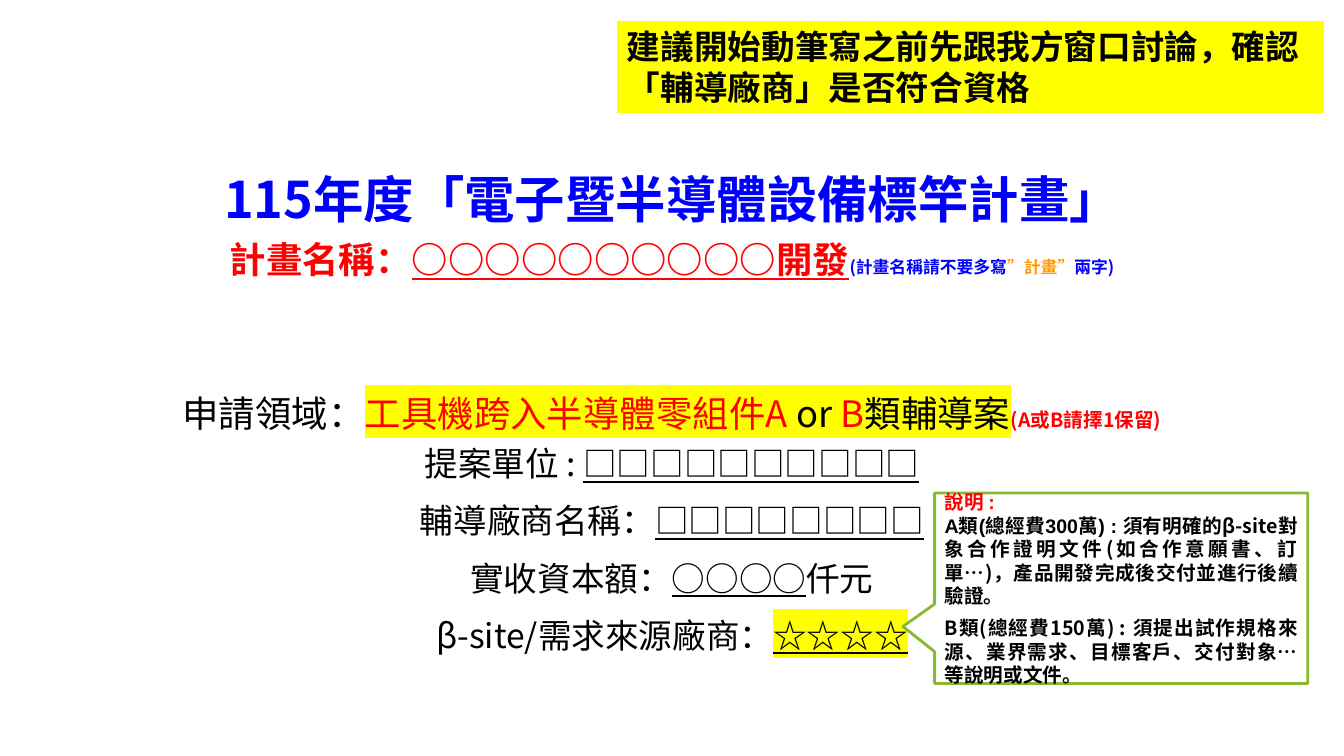
import pptx
import pptx.util
import pptx.oxml.ns
import pptx.dml.color
import pptx.enum.shapes
import pptx.enum.text
from lxml import etree

Inches, Pt = pptx.util.Inches, pptx.util.Pt
RGBColor = pptx.dml.color.RGBColor
SHAPE = pptx.enum.shapes.MSO_SHAPE
ALIGN = pptx.enum.text.PP_ALIGN
ANCHOR = pptx.enum.text.MSO_ANCHOR
AUTOSIZE = pptx.enum.text.MSO_AUTO_SIZE
qn = pptx.oxml.ns.qn

BLACK = RGBColor(0x00, 0x00, 0x00)
WHITE = RGBColor(0xFF, 0xFF, 0xFF)
BLUE = RGBColor(0x00, 0x00, 0xFF)
RED = RGBColor(0xFF, 0x00, 0x00)
ORANGE = RGBColor(0xFF, 0x99, 0x00)
YELLOW = RGBColor(0xFF, 0xFF, 0x00)
GREEN = RGBColor(0x8A, 0xB8, 0x33)
CJK = "Noto Sans CJK SC"


class SlideBuilder:
    base = dict(name=CJK, size=Pt(24), bold=False, underline=False)

    def __init__(self, s):
        self.s = s

    def run(self, p, text, color=BLACK, highlight=None, **fmt):
        r = p.add_run()
        r.text = text
        for key, value in {**self.base, **fmt}.items():
            setattr(r.font, key, value)
        r.font.color.rgb = color
        latin = r.font._element.find(qn("a:latin"))
        ea = etree.Element(qn("a:ea"), typeface=CJK)
        latin.addnext(ea)
        if highlight is not None:
            mark = etree.Element(qn("a:highlight"))
            etree.SubElement(mark, qn("a:srgbClr"), val=str(highlight))
            latin.addprevious(mark)

    def text(self, sp, paragraphs, anchor, **frame):
        """Fill a shape from (paragraph format, [(text, run format), ...]) pairs."""
        tf = sp.text_frame
        settings = dict(word_wrap=True, auto_size=AUTOSIZE.NONE, vertical_anchor=anchor)
        for key, value in {**settings, **frame}.items():
            setattr(tf, key, value)
        for i, (layout, runs) in enumerate(paragraphs):
            p = tf.add_paragraph() if i else tf.paragraphs[0]
            for key, value in {"space_before": Pt(0), **layout}.items():
                setattr(p, key, value)
            for text, fmt in runs:
                self.run(p, text, **fmt)

    def place(self, sp, box):
        for key, value in zip(("left", "top", "width", "height"), box):
            setattr(sp, key, Inches(value))

    def placeholder(self, index, box, paragraphs, anchor):
        sp = self.s.placeholders[index]
        self.place(sp, box)
        self.text(sp, paragraphs, anchor)
        return sp

    def shape(self, kind, box, paragraphs, fill, line=None, anchor=ANCHOR.MIDDLE, **frame):
        sp = self.s.shapes.add_shape(kind, *map(Inches, box))
        sp.shadow.inherit = False
        sp.fill.solid()
        sp.fill.fore_color.rgb = fill
        if line is None:
            sp.line.fill.background()
        else:
            sp.line.color.rgb = line
            sp.line.width = Pt(2)
        self.text(sp, paragraphs, anchor, **frame)
        return sp


def main():
    prs = pptx.Presentation()
    prs.slide_width, prs.slide_height = Inches(13.33), Inches(7.5)
    slide = SlideBuilder(prs.slides.add_slide(prs.slide_layouts[0]))

    heading = dict(alignment=ALIGN.CENTER, line_spacing=1.2)
    name = dict(size=Pt(26), bold=True, color=RED)
    hint = dict(size=Pt(12), bold=True, color=BLUE)
    title = slide.placeholder(0, (1, 1.6, 11.33, 1.13), [
        (heading, [("115年度「電子暨半導體設備標竿計畫」", dict(size=Pt(36), bold=True, color=BLUE))]),
        (heading, [("計畫名稱：", name),
                   ("○○○○○○○○○○開發", {**name, "underline": True}),
                   ("(計畫名稱請不要多寫", hint),
                   ("”計畫”", {**hint, "color": ORANGE}),
                   ("兩字)", hint)]),
    ], ANCHOR.MIDDLE)
    # A negative indent moves the project name left of centre
    title.text_frame.paragraphs[1]._p.get_or_add_pPr().set("indent", str(Inches(-0.53)))

    field = dict(size=Pt(26), highlight=YELLOW)
    centred = dict(alignment=ALIGN.CENTER)
    spaced = dict(centred, space_before=Pt(6), space_after=Pt(6))
    blank = dict(underline=True)
    entries = [
        [("提案單位 : ", {}), ("□" * 10, blank)],
        [("輔導廠商名稱：", {}), ("□" * 8, blank)],
        [("實收資本額：", {}), ("○" * 4, blank), ("仟元", {})],
        [("β-site/需求來源廠商：", {}), ("☆" * 4, dict(blank, highlight=YELLOW))],
    ]
    slide.placeholder(1, (1.56, 3.83, 10.21, 2.73), [
        (centred, [("申請領域：", dict(size=Pt(26))),
                   ("工具機跨入半導體零組件A", {**field, "color": RED}),
                   (" or ", field),
                   ("B", {**field, "color": RED}),
                   ("類輔導案", field),
                   ("(A或B請擇1保留)", dict(size=Pt(14), bold=True, color=RED))]),
        *((spaced, runs) for runs in entries),
    ], ANCHOR.TOP)

    note = dict(size=Pt(14), bold=True)
    arial = dict(note, name="Arial")
    justified = dict(alignment=ALIGN.JUSTIFY)
    callout = slide.shape(SHAPE.RECTANGULAR_CALLOUT, (9.27, 4.89, 3.7, 1.89), [
        (justified, [("說明 : ", {**arial, "color": RED})]),
        (justified, [("A類(總經費300萬) : 須有明確的", arial),
                     ("β-site對象合作證明文件(如合作意願書、訂單…)，產品開發完成後交付並進行後續驗證。", note)]),
        (dict(justified, space_before=Pt(6)),
         [("B類(總經費150萬) : 須提出試作規格來源、業界需求、目標客戶、交付對象…等說明或文件。", note)]),
    ], WHITE, GREEN)
    callout.adjustments[0], callout.adjustments[1] = -0.585, 0.201

    slide.shape(SHAPE.RECTANGLE, (6.12, 0.21, 7.01, 0.91), [
        (dict(alignment=ALIGN.LEFT),
         [("建議開始動筆寫之前先跟我方窗口討論，確認「輔導廠商」是否符合資格", dict(bold=True))]),
    ], YELLOW, anchor=ANCHOR.TOP, auto_size=AUTOSIZE.SHAPE_TO_FIT_TEXT)

    prs.save("out.pptx")


if __name__ == "__main__":
    main()
